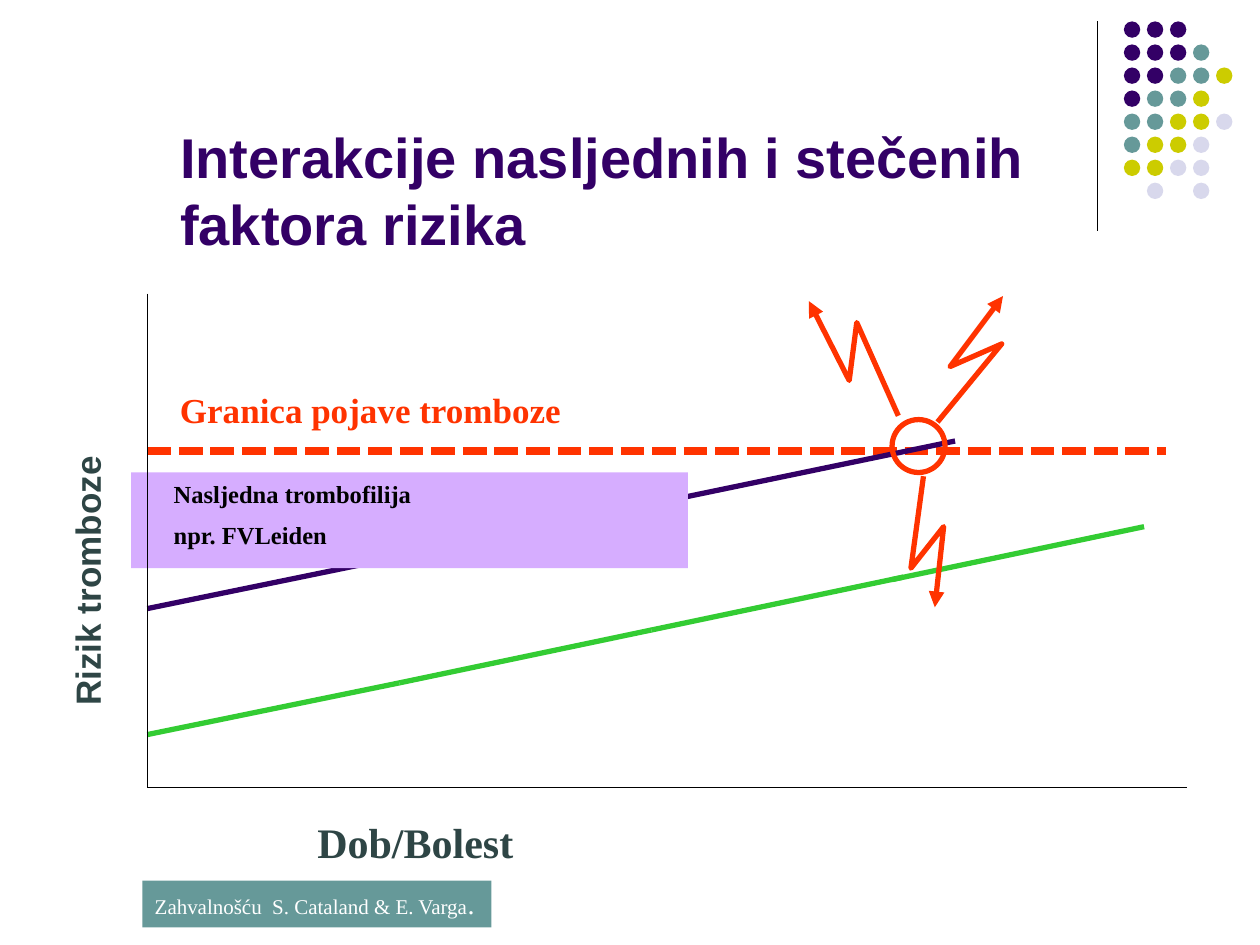
"""Build a slide on how inherited and acquired thrombosis risk factors interact."""
from lxml.etree import SubElement
from pptx import Presentation
from pptx.dml.color import RGBColor
from pptx.enum.dml import MSO_LINE
from pptx.enum.shapes import MSO_CONNECTOR, MSO_SHAPE
from pptx.enum.text import MSO_ANCHOR, MSO_AUTO_SIZE, PP_ALIGN
from pptx.oxml.ns import qn
from pptx.util import Inches, Pt

PURPLE, TEAL, OLIVE, PALE = "330066", "669999", "CCCC00", "D8D8EC"
RED, GREEN, BLACK, SLATE = "FF3300", "33CC33", "000000", "2E4545"
SERIF = "Times New Roman"


def paint(fill, color):
    """Make a fill solid in a hex colour."""
    fill.solid()
    fill.fore_color.rgb = RGBColor.from_string(color)


def write(paragraph, text, *, size, color, font=SERIF, bold=True, before=0, spacing=1.0):
    """Add a formatted, left-aligned run to a paragraph."""
    paragraph.alignment = PP_ALIGN.LEFT
    paragraph.space_before = Pt(before)
    paragraph.line_spacing = spacing
    run = paragraph.add_run()
    run.text = text
    run.font.name = font
    run.font.size = Pt(size)
    run.font.bold = bold
    paint(run.font.fill, color)


presentation = Presentation()
presentation.slide_width = Inches(10)
presentation.slide_height = Inches(7.5)
slide = presentation.slides.add_slide(presentation.slide_layouts[5])
shapes = slide.shapes

title = shapes.title
title.left, title.top = Inches(1.33), Inches(0.13)
title.width, title.height = Inches(7.42), Inches(1.96)
title.text_frame.auto_size = MSO_AUTO_SIZE.NONE
title.text_frame.vertical_anchor = MSO_ANCHOR.BOTTOM
write(title.text_frame.paragraphs[0], "Interakcije nasljednih i stečenih faktora rizika",
      size=32, color=PURPLE, font="Arial")

dot_colors = {"P": PURPLE, "T": TEAL, "O": OLIVE, "L": PALE}
dot_rows = ["PPP", "PPPT", "PPTTO", "PTTO", "TTOOL", "TOOL", "OOLL", " L L"]
dot_pitch = 1.28 / 7
for row, codes in enumerate(dot_rows):
    for column, code in enumerate(codes):
        if code in dot_colors:
            dot = shapes.add_shape(
                MSO_SHAPE.OVAL, Inches(8.92 + column * dot_pitch),
                Inches(0.17 + row * dot_pitch), Inches(0.13), Inches(0.13))
            dot.shadow.inherit = False
            paint(dot.fill, dot_colors[code])
            dot.line.fill.background()

lines = [
    (8.71, 0.17, 8.71, 1.83, BLACK, 0.75),
    (1.17, 3.58, 9.25, 3.58, RED, 4.5),
    (1.17, 5.83, 3.17, 5.42, GREEN, 3),
    (3.17, 5.42, 5.17, 5, GREEN, 3),
    (5.17, 5, 7.17, 4.58, GREEN, 3),
    (7.08, 4.6, 9.08, 4.18, GREEN, 3),
    (1.17, 4.83, 3.17, 4.42, PURPLE, 3),
    (5.17, 4, 7.58, 3.5, PURPLE, 3),
    (1.17, 6.25, 9.42, 6.25, BLACK, 1),
    (1.17, 2.33, 1.17, 6.25, BLACK, 1),
]
for *ends, color, width in lines:
    connector = shapes.add_connector(MSO_CONNECTOR.STRAIGHT, *map(Inches, ends))
    SubElement(connector._element.spPr, qn("a:effectLst"))
    paint(connector.line.fill, color)
    connector.line.width = Pt(width)
    if color == RED:
        connector.line.dash_style = MSO_LINE.SQUARE_DOT
vertical_axis = connector

bolts = [
    [(7.13, 3.3), (6.8, 2.56), (6.74, 3.02), (6.42, 2.39)],
    [(7.33, 3.78), (7.23, 4.51), (7.49, 4.18), (7.42, 4.82)],
    [(7.44, 3.35), (7.95, 2.73), (7.54, 2.91), (7.96, 2.35)],
]
for bolt in bolts:
    start, *corners = [(Inches(x), Inches(y)) for x, y in bolt]
    builder = shapes.build_freeform(*start)
    builder.add_line_segments(corners, close=False)
    arrow = builder.convert_to_shape()
    arrow.shadow.inherit = False
    arrow.fill.background()
    paint(arrow.line.fill, RED)
    arrow.line.width = Pt(3)
    SubElement(arrow.line._get_or_add_ln(), qn("a:tailEnd"), type="triangle")

crossing = shapes.add_shape(
    MSO_SHAPE.OVAL, Inches(7.08), Inches(3.33), Inches(0.42), Inches(0.42))
crossing.shadow.inherit = False
crossing.fill.background()
paint(crossing.line.fill, RED)
crossing.line.width = Pt(3)

labels = [
    ("Dob/Bolest", 2.42, 6.33, 1.77, 0.56, 0, 24, SERIF, SLATE),
    ("Granica pojave tromboze", 1.33, 2.95, 3.32, 0.48, 0, 20, SERIF, RED),
    ("Rizik tromboze", -0.47, 4.36, 2.2, 0.48, 270, 20, "Arial", SLATE),
]
for text, *box, rotation, size, font, color in labels:
    label = shapes.add_textbox(*map(Inches, box))
    label.rotation = rotation
    label.text_frame.word_wrap = False
    write(label.text_frame.paragraphs[0], text, size=size, color=color, font=font,
          before=size * 0.2, spacing=1.25)

panels = []
for *box, color in [(1.04, 3.75, 4.42, 0.76, "D6ADFF"), (1.13, 6.99, 2.77, 0.37, TEAL)]:
    panel = shapes.add_shape(MSO_SHAPE.RECTANGLE, *map(Inches, box))
    panel.shadow.inherit = False
    paint(panel.fill, color)
    panel.line.fill.background()
    panel.text_frame.vertical_anchor = MSO_ANCHOR.TOP
    panels.append(panel)
inherited, credit = panels
vertical_axis._element.addprevious(inherited._element)

inherited.text_frame.add_paragraph()
for paragraph, text in zip(inherited.text_frame.paragraphs,
                           ["Nasljedna trombofilija", "npr. FVLeiden"]):
    write(paragraph, text, size=14, color=BLACK, before=7)
    properties = paragraph._p.get_or_add_pPr()
    properties.set("marL", str(Inches(0.74)))
    properties.set("indent", str(Inches(-0.5)))

credit.text_frame.word_wrap = False
for text, size in [("Zahvalnošću  S. Cataland & E. Varga", 12), (".", 16)]:
    write(credit.text_frame.paragraphs[0], text, size=size, color="FFFFFF", bold=False)

presentation.save("out.pptx")
